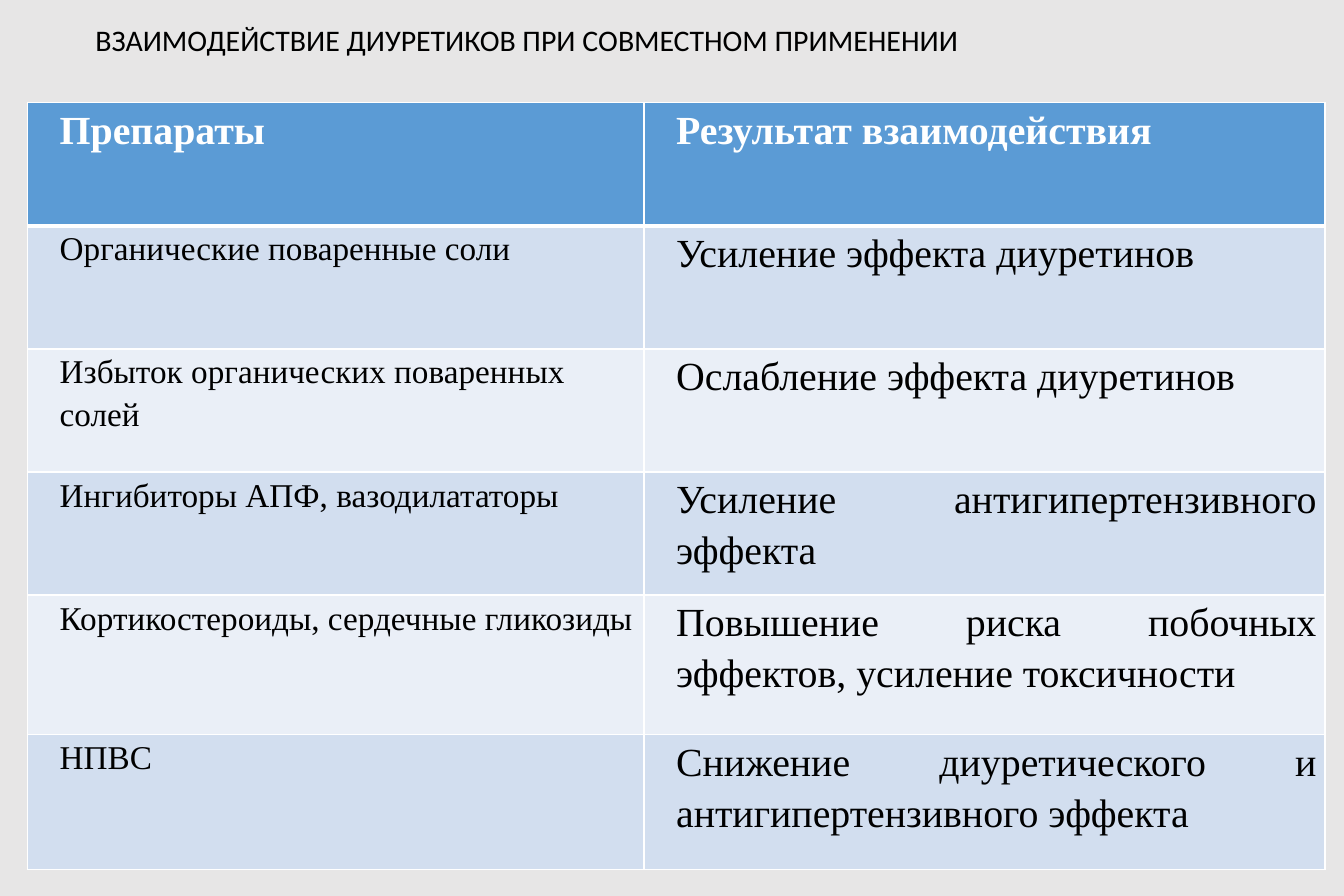
from dataclasses import dataclass

from lxml import etree
from pptx import Presentation
from pptx.dml.color import RGBColor
from pptx.enum.text import MSO_ANCHOR, PP_ALIGN
from pptx.oxml.ns import qn
from pptx.util import Pt

LEFT, JUSTIFY = PP_ALIGN.LEFT, PP_ALIGN.JUSTIFY
MIDDLE, TOP = MSO_ANCHOR.MIDDLE, MSO_ANCHOR.TOP
BLANK_LAYOUT = 6
EMU_PER_PX = 9144  # 100 px to the inch


@dataclass(frozen=True)
class Theme:
    background: str = "E7E6E6"
    header: str = "5B9BD5"
    bands: tuple = ("D2DEEF", "EAEFF7")
    white: str = "FFFFFF"
    black: str = "000000"
    title_font: str = "Calibri"
    table_font: str = "Times New Roman"
    title_size: int = 18
    drug_size: int = 20
    result_size: int = 24
    thin: int = 1
    thick: int = 3


THEME = Theme()
TITLE = "ВЗАИМОДЕЙСТВИЕ ДИУРЕТИКОВ ПРИ СОВМЕСТНОМ ПРИМЕНЕНИИ"
INTERACTIONS = [
    ("Препараты", "Результат взаимодействия"),
    ("Органические поваренные соли", "Усиление эффекта диуретинов"),
    ("Избыток органических поваренных солей", "Ослабление эффекта диуретинов"),
    ("Ингибиторы АПФ, вазодилататоры", "Усиление антигипертензивного эффекта"),
    ("Кортикостероиды, сердечные гликозиды",
     "Повышение риска побочных эффектов, усиление токсичности"),
    ("НПВС", "Снижение диуретического и антигипертензивного эффекта"),
]
COLUMN_WIDTHS = (516, 570)
ROW_HEIGHTS = (103, 103, 103, 103, 117, 113)
CELL_MARGIN = 7
CELL_INDENT = 20


def px(length):
    return length * EMU_PER_PX


def apply_format(target, values):
    for name, value in values.items():
        setattr(target, name, value)


def paint(fill, color):
    fill.solid()
    fill.fore_color.rgb = RGBColor.from_string(color)


def write(frame, text, color, font_format, para_format):
    para = frame.paragraphs[0]
    apply_format(para, para_format)
    span = para.add_run()
    span.text = text
    apply_format(span.font, font_format)
    span.font.color.rgb = RGBColor.from_string(color)
    return para


def set_borders(cell, widths):
    """Draw white cell edges; widths maps lnL, lnR, lnT, lnB to points."""
    properties = cell._tc.get_or_add_tcPr()
    for position, (edge, width) in enumerate(widths.items()):
        line = etree.Element(qn(f"a:{edge}"), w=str(Pt(width)))
        fill = etree.SubElement(line, qn("a:solidFill"))
        etree.SubElement(fill, qn("a:srgbClr"), val=THEME.white)
        properties.insert(position, line)


def add_title(page):
    box = page.shapes.add_textbox(px(70), 0, px(977), px(70))
    apply_format(box.text_frame, {"word_wrap": True, "vertical_anchor": MIDDLE})
    write(box.text_frame, TITLE, THEME.black,
          {"name": THEME.title_font, "size": Pt(THEME.title_size)},
          {"line_spacing": 0.9})


def format_cell(cell, text, row, column):
    is_header = row == 0
    is_drug = column == 0 and not is_header
    paint(cell.fill, THEME.header if is_header else THEME.bands[(row - 1) % 2])
    set_borders(cell, {
        "lnL": THEME.thin,
        "lnR": THEME.thin,
        "lnT": THEME.thick if row == 1 else THEME.thin,
        "lnB": THEME.thick if is_header else THEME.thin,
    })
    apply_format(cell, {
        "margin_left": px(CELL_MARGIN), "margin_right": px(CELL_MARGIN),
        "margin_top": 0, "margin_bottom": 0, "vertical_anchor": TOP,
    })
    size = THEME.drug_size if is_drug else THEME.result_size
    para = write(cell.text_frame, text,
                 THEME.white if is_header else THEME.black,
                 {"name": THEME.table_font, "size": Pt(size), "bold": is_header},
                 {"alignment": LEFT if is_drug else JUSTIFY,
                  "line_spacing": 1.15})
    para._p.get_or_add_pPr().set("marL", str(px(CELL_INDENT)))


def add_interaction_table(page):
    table = page.shapes.add_table(
        len(ROW_HEIGHTS), len(COLUMN_WIDTHS), px(23), px(86),
        px(sum(COLUMN_WIDTHS)), px(sum(ROW_HEIGHTS))).table
    for column, width in zip(table.columns, COLUMN_WIDTHS):
        column.width = px(width)
    for row, height in zip(table.rows, ROW_HEIGHTS):
        row.height = px(height)
    for row, texts in enumerate(INTERACTIONS):
        for column, text in enumerate(texts):
            format_cell(table.cell(row, column), text, row, column)


def main():
    deck = Presentation()
    apply_format(deck, {"slide_width": px(1125), "slide_height": px(750)})
    page = deck.slides.add_slide(deck.slide_layouts[BLANK_LAYOUT])
    paint(page.background.fill, THEME.background)
    add_title(page)
    add_interaction_table(page)
    deck.save("out.pptx")


if __name__ == "__main__":
    main()
